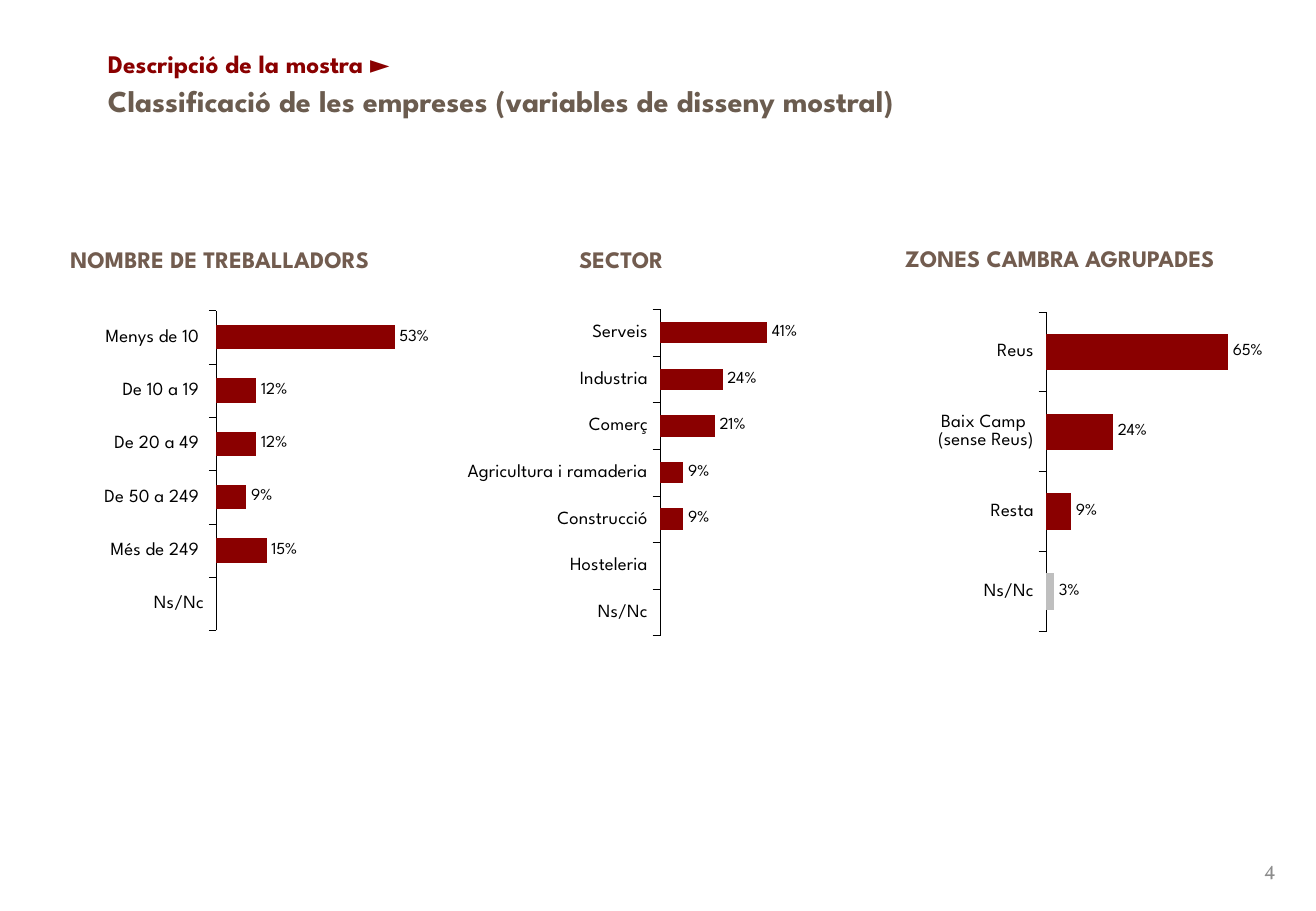
from dataclasses import dataclass

from lxml import etree
from pptx import Presentation
from pptx.chart.data import CategoryChartData
from pptx.dml.color import RGBColor
from pptx.enum.chart import XL_CHART_TYPE, XL_LABEL_POSITION, XL_TICK_MARK
from pptx.enum.text import MSO_ANCHOR, PP_ALIGN
from pptx.util import Pt

BAR = XL_CHART_TYPE.BAR_CLUSTERED
OUT_END = XL_LABEL_POSITION.OUTSIDE_END
TICK_OUT, TICK_NONE = XL_TICK_MARK.OUTSIDE, XL_TICK_MARK.NONE
TOP, MIDDLE = MSO_ANCHOR.TOP, MSO_ANCHOR.MIDDLE
LEFT, RIGHT = PP_ALIGN.LEFT, PP_ALIGN.RIGHT


@dataclass(frozen=True)
class Theme:
    """Colours, typefaces and type sizes of the deck."""
    red: RGBColor = RGBColor(0x8A, 0, 0)
    brown: RGBColor = RGBColor(0x6B, 0x5C, 0x4F)
    clay: RGBColor = RGBColor(0x72, 0x5C, 0x4F)
    gray: RGBColor = RGBColor(0x8C, 0x8C, 0x8C)
    pale: RGBColor = RGBColor(0xBF, 0xBF, 0xBF)
    black: RGBColor = RGBColor(0, 0, 0)
    sans: str = "League Spartan"
    serif: str = "Vollkorn"
    base: str = "Arial"
    kicker: float = 15
    title: float = 18
    head: float = 14
    page: float = 12
    axis: float = 11
    label: float = 10
    chart: float = 8.8


THEME = Theme()

PANELS = [
    {"box": (33.8, 173.5, 311.8, 208.8), "shift": (0.8, -31.7),
     "head": "NOMBRE DE TREBALLADORS", "plot": (0.302, 0.051, 0.641, 0.908),
     "data": {"Menys de 10 ": 0.53, "De 10 a 19 ": 0.12, "De 20 a 49 ": 0.12,
              "De 50 a 249 ": 0.09, "Més de 249 ": 0.15, "Ns/Nc": None},
     "pale": [5]},
    {"box": (469.4, 174.2, 337.7, 208.8), "shift": (59.8, -33.1),
     "head": "ZONES CAMBRA AGRUPADES", "plot": (0.445, 0.051, 0.492, 0.908),
     "data": {"Reus": 0.65, "Baix Camp \n(sense Reus)": 0.24,
              "Resta": 0.09, "Ns/Nc": 0.03},
     "pale": [3]},
    {"box": (220.3, 168.5, 345.6, 213.1), "shift": (115.9, -26.7),
     "head": "SECTOR", "plot": (0.494, 0.07, 0.448, 0.908),
     "data": {"Serveis": 0.41, "Industria": 0.24, "Comerç": 0.21,
              "Agricultura i ramaderia": 0.09, "Construcció": 0.09,
              "Hosteleria": None, "Ns/Nc": None},
     "pale": []},
]


def apply(item, values):
    """Set each named value on the item."""
    for name, value in values.items():
        setattr(item, name, value)


def style(font, size, color, bold=False, name=THEME.sans):
    """Give a font its face, size, weight and colour."""
    apply(font, {"name": name, "size": Pt(size), "bold": bold})
    font.color.rgb = color


def write(slide, box, text, size, color, bold=True, name=THEME.sans,
          anchor=TOP, align=LEFT):
    """Add one line of text in a box."""
    frame = slide.shapes.add_textbox(*map(Pt, box)).text_frame
    apply(frame, {"word_wrap": True, "vertical_anchor": anchor, "text": text})
    line = frame.paragraphs[0]
    line.alignment = align
    style(line.runs[0].font, size, color, bold, name)


def header(slide, box):
    """Place the kicker and the title in the box."""
    left, top, width, height = box
    write(slide, (left, top, width, 34.6), "Descripció de la mostra ►",
          THEME.kicker, THEME.red, anchor=MIDDLE)
    write(slide, (left, top + 25.2, width, height - 25.2),
          "Classificació de les empreses (variables de disseny mostral)",
          THEME.title, THEME.brown)


def layout(chart, plot):
    """Fix the inner plot area as shares of the chart."""
    area = chart._chartSpace.chart.plotArea
    space = etree.QName(area).namespace
    for old in area.findall(f"{{{space}}}layout"):
        area.remove(old)
    outer = etree.Element(f"{{{space}}}layout")
    inner = etree.SubElement(outer, f"{{{space}}}manualLayout")
    values = {"layoutTarget": "inner", "xMode": "edge", "yMode": "edge",
              **dict(zip("xywh", plot))}
    for name, value in values.items():
        etree.SubElement(inner, f"{{{space}}}{name}", val=str(value))
    area.insert(0, outer)


def axes(chart):
    """Style the category axis and hide the value axis."""
    cats, vals = chart.category_axis, chart.value_axis
    apply(cats, {"reverse_order": True, "major_tick_mark": TICK_OUT,
                 "minor_tick_mark": TICK_NONE, "has_major_gridlines": False})
    style(cats.tick_labels.font, THEME.axis, THEME.black)
    cats.format.line.color.rgb = THEME.black
    cats.format.line.width = Pt(0.25)
    apply(vals, {"visible": False, "minimum_scale": 0, "maximum_scale": 1,
                 "has_major_gridlines": False})


def bars(chart, pale):
    """Colour and label the bars."""
    plot = chart.plots[0]
    apply(plot, {"gap_width": 120, "vary_by_categories": False,
                 "has_data_labels": True})
    labels = plot.data_labels
    apply(labels, {"show_value": True, "number_format": "0%",
                   "number_format_is_linked": False, "position": OUT_END})
    style(labels.font, THEME.label, THEME.black)
    series = plot.series[0]
    fills = [(series, THEME.red)]
    fills += [(series.points[i], THEME.pale) for i in pale]
    for item, color in fills:
        item.format.fill.solid()
        item.format.fill.fore_color.rgb = color


def panel(slide, box, shift, head, plot, data, pale):
    """Place a heading and its bar chart relative to the box."""
    left, top = box[:2]
    write(slide, (left + shift[0], top + shift[1], 260, 24.5), head,
          THEME.head, THEME.clay)
    source = CategoryChartData(number_format="0%")
    source.categories = list(data)
    source.add_series("Series 1", list(data.values()))
    chart = slide.shapes.add_chart(BAR, *map(Pt, box), source).chart
    apply(chart, {"has_legend": False, "has_title": False})
    style(chart.font, THEME.chart, THEME.black, True, THEME.base)
    layout(chart, plot)
    axes(chart)
    bars(chart, pale)


def footer(slide, box):
    """Place the page number in the box."""
    write(slide, box, "4", THEME.page, THEME.gray, False, THEME.serif,
          MIDDLE, RIGHT)


def main():
    """Build the slide and save it."""
    deck = Presentation()
    apply(deck, {"slide_width": Pt(779.76), "slide_height": Pt(540)})
    slide = deck.slides.add_slide(deck.slide_layouts[6])
    header(slide, (56.9, 20.2, 663, 58.3))
    for part in PANELS:
        panel(slide, **part)
    footer(slide, (587.5, 500.4, 175.7, 28.8))
    deck.save("out.pptx")


if __name__ == "__main__":
    main()
